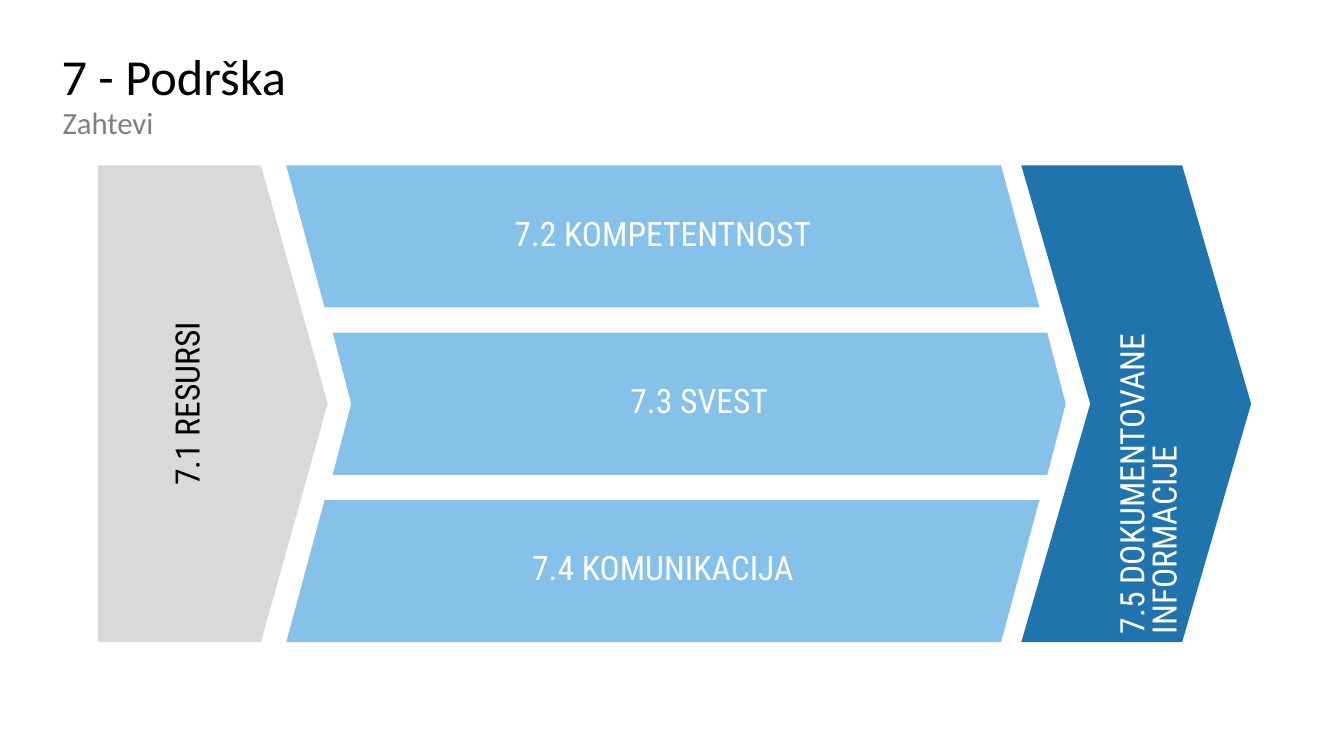
from dataclasses import dataclass

from pptx import Presentation
from pptx.dml.color import RGBColor
from pptx.enum.shapes import MSO_SHAPE
from pptx.enum.text import MSO_ANCHOR, PP_ALIGN
from pptx.shapes.autoshape import Shape
from pptx.slide import Slide
from pptx.util import Inches, Pt

PAGE_WIDTH, PAGE_HEIGHT = Inches(13.33), Inches(7.5)
COLUMN, ROW = PAGE_WIDTH / 100, PAGE_HEIGHT / 100

FLOW_TOP, FLOW_HEIGHT = 21.87, 63.07
END_WIDTH = 17.1
BAND_HEIGHT = 18.8
BAND_PITCH = (FLOW_HEIGHT - BAND_HEIGHT) / 2


@dataclass(frozen=True)
class Theme:
    heading_font: str = "Calibri"
    flow_font: str = "Roboto Condensed"
    title_size: int = 36
    subtitle_size: int = 22
    flow_size: int = 24
    black: str = "000000"
    white: str = "FFFFFF"
    muted: str = "7F7F7F"
    gray: str = "D9D9D9"
    light_blue: str = "85C1E9"
    dark_blue: str = "1F74AD"


THEME = Theme()


@dataclass(frozen=True)
class Area:
    """A place on the grid of 100 columns by 100 rows."""
    column: float
    row: float
    columns: float
    rows: float

    def lengths(self) -> tuple[int, ...]:
        return (round(self.column * COLUMN), round(self.row * ROW),
                round(self.columns * COLUMN), round(self.rows * ROW))


@dataclass(frozen=True)
class Label:
    text: str
    font: str
    size: int
    color: str
    align: PP_ALIGN = PP_ALIGN.LEFT
    anchor: MSO_ANCHOR = MSO_ANCHOR.TOP
    line_spacing: float = 1.0
    insets: tuple[float, ...] = (0, 0, 0, 0)
    upward: bool = False


@dataclass(frozen=True)
class Step:
    area: Area
    preset: MSO_SHAPE
    adjustment: float
    fill: str
    label: Label
    mirrored: bool = False


def apply_format(target: object, values: dict[str, object]) -> None:
    for name, value in values.items():
        setattr(target, name, value)


def write_label(box: Shape, label: Label) -> None:
    frame = box.text_frame
    left, top, right, bottom = map(Inches, label.insets)
    apply_format(frame, {
        "word_wrap": True, "vertical_anchor": label.anchor,
        "margin_left": left, "margin_top": top,
        "margin_right": right, "margin_bottom": bottom,
    })
    if label.upward:
        box.element.xpath(".//a:bodyPr")[0].set("vert", "vert270")
    para = frame.paragraphs[0]
    apply_format(para, {"alignment": label.align, "line_spacing": label.line_spacing})
    span = para.add_run()
    span.text = label.text
    apply_format(span.font, {"name": label.font, "size": Pt(label.size)})
    span.font.color.rgb = RGBColor.from_string(label.color)


def draw_heading(page: Slide, area: Area, label: Label) -> None:
    write_label(page.shapes.add_textbox(*area.lengths()), label)


def draw_step(page: Slide, step: Step) -> None:
    box = page.shapes.add_shape(step.preset, *step.area.lengths())
    box.adjustments[0] = step.adjustment
    box.shadow.inherit = False
    box.fill.solid()
    box.fill.fore_color.rgb = RGBColor.from_string(step.fill)
    box.line.fill.background()
    if step.mirrored:
        box.element.spPr.xfrm.set("flipH", "1")
    write_label(box, step.label)


def flow_label(text: str, color: str = THEME.white,
               align: PP_ALIGN = PP_ALIGN.CENTER,
               anchor: MSO_ANCHOR = MSO_ANCHOR.MIDDLE,
               insets: tuple[float, ...] = (0, 0, 0, 0),
               upward: bool = False) -> Label:
    return Label(text, THEME.flow_font, THEME.flow_size, color, align, anchor,
                 0.8, insets, upward)


def end_area(column: float) -> Area:
    return Area(column, FLOW_TOP, END_WIDTH, FLOW_HEIGHT)


def band_area(index: int, column: float, columns: float) -> Area:
    return Area(column, FLOW_TOP + index * BAND_PITCH, columns, BAND_HEIGHT)


HEADINGS = [
    (Area(4.58, 6, 91, 15.6),
     Label("7 - Podrška", THEME.heading_font, THEME.title_size, THEME.black)),
    (Area(4.58, 13.73, 91, 7.87),
     Label("Zahtevi", THEME.heading_font, THEME.subtitle_size, THEME.muted,
           insets=(0.01, 0, 0, 0))),
]

STEPS = [
    Step(end_area(7.28), MSO_SHAPE.PENTAGON, 0.29, THEME.gray,
         flow_label("7.1 RESURSI", THEME.black, insets=(0, 0, 0.12, 0), upward=True)),
    Step(band_area(0, 21.3, 56.04), MSO_SHAPE.PARALLELOGRAM, 0.27,
         THEME.light_blue, flow_label("7.2 KOMPETENTNOST"), mirrored=True),
    Step(band_area(1, 24.76, 54.54), MSO_SHAPE.CHEVRON, 0.13,
         THEME.light_blue, flow_label("7.3 SVEST")),
    Step(band_area(2, 21.3, 56.04), MSO_SHAPE.PARALLELOGRAM, 0.27,
         THEME.light_blue, flow_label("7.4 KOMUNIKACIJA")),
    Step(end_area(75.99), MSO_SHAPE.CHEVRON, 0.3, THEME.dark_blue,
         flow_label("7.5 DOKUMENTOVANE INFORMACIJE", align=PP_ALIGN.LEFT,
                    anchor=MSO_ANCHOR.TOP, insets=(0.28, 0, 0, 0.08), upward=True)),
]


def main() -> None:
    deck = Presentation()
    apply_format(deck, {"slide_width": PAGE_WIDTH, "slide_height": PAGE_HEIGHT})
    page = deck.slides.add_slide(deck.slide_layouts[6])
    for area, label in HEADINGS:
        draw_heading(page, area, label)
    for step in STEPS:
        draw_step(page, step)
    deck.save("out.pptx")


if __name__ == "__main__":
    main()
